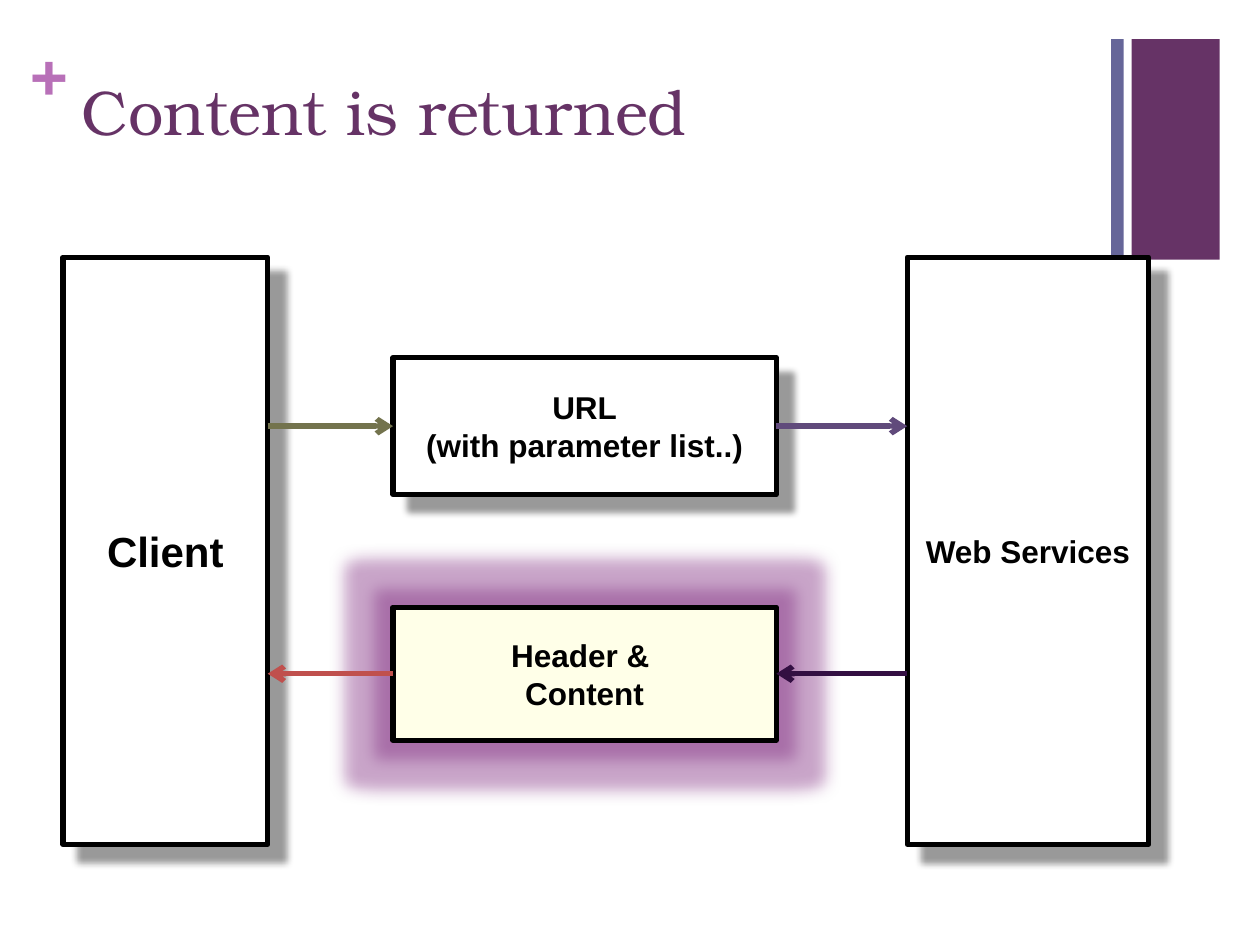
from lxml.etree import SubElement
from pptx import Presentation
from pptx.dml.color import RGBColor
from pptx.enum.shapes import MSO_CONNECTOR, MSO_SHAPE
from pptx.enum.text import MSO_ANCHOR, PP_ALIGN
from pptx.oxml.ns import qn
from pptx.util import Pt

COLORS = {
    "plum": "663366", "slate": "666699", "plus": "B870B8",
    "black": "000000", "white": "FFFFFF", "cream": "FFFFE8", "glow": "792079",
    "olive": "73734D", "violet": "604A7B", "red": "C0504D", "purple": "330F42",
}
HEADING_FONT = "TeX Gyre Bonum"
BODY_FONT = "Arial"
TOP, LEFT, RIGHT = 0, 1, 3


def rgb(name):
    """Return the named colour."""
    return RGBColor.from_string(COLORS[name])


def style_font(paragraph, name, size, color, bold=False):
    """Set the font of a whole paragraph."""
    font = paragraph.font
    font.name, font.size, font.bold = name, Pt(size), bold
    font.color.rgb = rgb(color)


def add_effect(shape, kind, color, alpha, **attributes):
    """Give a shape one colour effect such as a shadow or a glow."""
    effects = shape._element.spPr.find(qn("a:effectLst"))
    effect = SubElement(effects, qn(f"a:{kind}"), {key: str(value) for key, value in attributes.items()})
    color_element = SubElement(effect, qn("a:srgbClr"), val=COLORS[color])
    SubElement(color_element, qn("a:alpha"), val=str(alpha * 1000))


def add_rectangle(slide, box, fill):
    """Add a plain filled rectangle."""
    shape = slide.shapes.add_shape(MSO_SHAPE.RECTANGLE, *map(Pt, box))
    shape.shadow.inherit = False
    shape.fill.solid()
    shape.fill.fore_color.rgb = rgb(fill)
    shape.line.fill.background()
    return shape


def add_heading_text(slide, box, text, inset, bold, color):
    """Add one line of text in the heading font."""
    frame = slide.shapes.add_textbox(*map(Pt, box)).text_frame
    frame.word_wrap = True
    frame.margin_left = frame.margin_right = Pt(inset)
    frame.margin_top = frame.margin_bottom = Pt(inset / 2)
    frame.text = text
    style_font(frame.paragraphs[0], HEADING_FONT, 36, color, bold)


def add_header(slide, left, top, width):
    """Place the plus mark, the title and the corner bars."""
    add_rectangle(slide, (left + width - 50.4, top + 4.4, 50.4, 126), "plum")
    add_heading_text(slide, (left, top, 21, 44), "+", 0, True, "plus")
    add_rectangle(slide, (left + width - 62, top + 4.4, 7.2, 126), "slate")
    add_heading_text(slide, (left + 22.3, top + 20, 595, 88), "Content is returned", 7.2, False, "plum")


def add_node(slide, box, lines, size=18, fill="white", glowing=False):
    """Add an outlined box with centred bold text and a shadow or a glow."""
    shape = add_rectangle(slide, box, fill)
    shape.line.color.rgb = rgb("black")
    shape.line.width = Pt(3)
    if glowing:
        add_effect(shape, "glow", "glow", 40, rad=Pt(18))
    else:
        add_effect(shape, "outerShdw", "black", 40, blurRad=Pt(4), dist=Pt(13), dir=45 * 60000)
    frame = shape.text_frame
    frame.word_wrap = True
    frame.vertical_anchor = MSO_ANCHOR.MIDDLE
    frame.text = "\n".join(lines)
    for paragraph in frame.paragraphs:
        paragraph.alignment = PP_ALIGN.CENTER
        style_font(paragraph, BODY_FONT, size, "black", True)
    return shape


def add_arrow(slide, start, end, y, color):
    """Add a horizontal arrow between two x positions."""
    connector = slide.shapes.add_connector(MSO_CONNECTOR.STRAIGHT, start, y, end, y)
    connector.line.color.rgb = rgb(color)
    connector.line.width = Pt(3)
    SubElement(connector.line._get_or_add_ln(), qn("a:tailEnd"), type="arrow")
    SubElement(connector._element.spPr, qn("a:effectLst"))
    return connector


def add_exchange(slide, left, top, width, height):
    """Place client, messages and services, and join them with arrows."""
    client = add_node(slide, (left, top, 117, height), ["Client"], size=24)
    services = add_node(slide, (left + width - 138, top, 138, height), ["Web Services"])
    message_left = left + 188.6
    request = add_node(slide, (message_left, top + 57.5, 219, 78), ["URL", "(with parameter list..)"])
    response = add_node(slide, (message_left, top + 200, 219, 76), ["Header & ", "Content"],
                        fill="cream", glowing=True)

    client_side = client.left + client.width
    message_side = request.left + request.width
    request_y = request.top + request.height // 2
    response_y = response.top + response.height // 2
    add_arrow(slide, client_side, request.left, request_y, "olive").end_connect(request, LEFT)
    add_arrow(slide, response.left, client_side, response_y, "red").begin_connect(response, LEFT)
    add_arrow(slide, message_side, services.left, request_y, "violet").begin_connect(request, RIGHT)
    add_arrow(slide, services.left, message_side, response_y, "purple").end_connect(response, RIGHT)


def main():
    """Build the slide and save it."""
    presentation = Presentation()
    presentation.slide_width, presentation.slide_height = Pt(720), Pt(540)
    slide = presentation.slides.add_slide(presentation.slide_layouts[6])
    add_header(slide, 17.3, 18, 679.7)
    add_exchange(slide, 36, 147, 620.4, 335.5)
    presentation.save("out.pptx")


if __name__ == "__main__":
    main()
